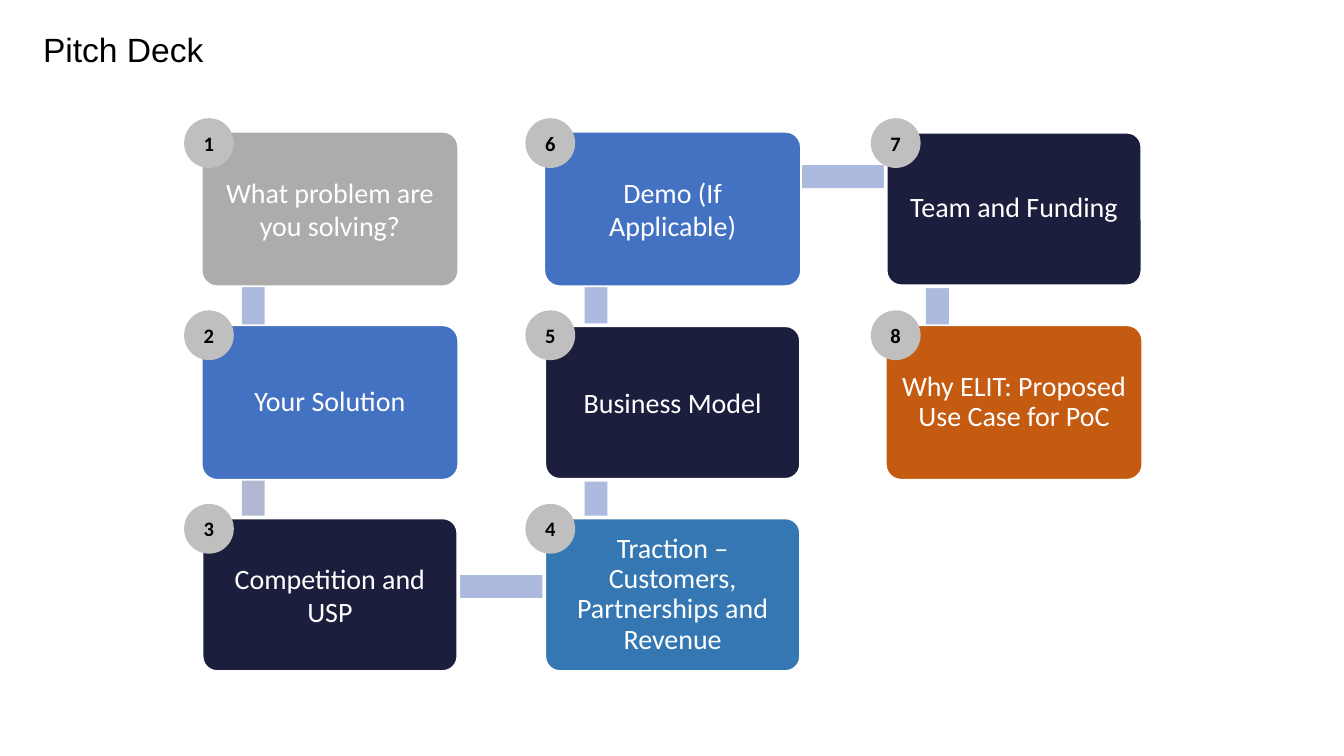
from pptx import Presentation
from pptx.dml.color import RGBColor
from pptx.enum import shapes, text
from pptx.util import Inches, Pt

WHITE = RGBColor(0xFF, 0xFF, 0xFF)
BLACK = RGBColor(0x00, 0x00, 0x00)
GRAY = RGBColor(0xAE, 0xAB, 0xAB)
BADGE_GRAY = RGBColor(0xBF, 0xBF, 0xBF)
BLUE = RGBColor(0x43, 0x72, 0xC3)
NAVY = RGBColor(0x1B, 0x1E, 0x3D)
TEAL = RGBColor(0x34, 0x77, 0xB2)
ORANGE = RGBColor(0xC5, 0x5A, 0x11)
LINK = RGBColor(0xAB, 0xBA, 0xDE)
LINK_GRAY = RGBColor(0xB1, 0xB8, 0xD2)

COLUMNS = [1.5, 4.05, 6.59]
ROWS = [0.98, 2.42, 3.85]
BADGE_COLUMNS = [1.37, 3.91, 6.48]
BADGE_ROWS = [0.88, 2.31, 3.75]
CARD_WIDTH, CARD_HEIGHT = 1.91, 1.15
BADGE_SIZE = 0.37
LINK_THICKNESS = 0.17

# Steps in reading order: label, column, row, fill, outline width, line spacing
STEPS = [
    ("What problem are you solving?", 0, 0, GRAY, 1, 1.0),
    ("Your Solution", 0, 1, BLUE, 1, 0.9),
    ("Competition and USP", 0, 2, NAVY, 2, 1.0),
    ("Traction – Customers, Partnerships and Revenue", 1, 2, TEAL, 2, 0.9),
    ("Business Model", 1, 1, NAVY, 2, 1.0),
    ("Demo (If Applicable)", 1, 0, BLUE, 1, 1.0),
    ("Team and Funding", 2, 0, NAVY, 2, 0.9),
    ("Why ELIT: Proposed Use Case for PoC", 2, 1, ORANGE, 1, 0.9),
]


def add_filled_shape(kind, left, top, width, height, fill):
    shape = slide.shapes.add_shape(
        kind, Inches(left), Inches(top), Inches(width), Inches(height))
    shape.shadow.inherit = False
    shape.fill.solid()
    shape.fill.fore_color.rgb = fill
    shape.line.fill.background()
    return shape


def write_text(shape, content, size, color, font_name, margins, spacing=1.0,
               alignment=text.PP_ALIGN.CENTER, bold=False):
    frame = shape.text_frame
    frame.text = content
    frame.word_wrap = True
    frame.vertical_anchor = text.MSO_ANCHOR.MIDDLE
    frame.margin_left = frame.margin_right = Inches(margins[0])
    frame.margin_top = frame.margin_bottom = Inches(margins[1])
    paragraph = frame.paragraphs[0]
    paragraph.alignment = alignment
    paragraph.line_spacing = spacing
    font = paragraph.runs[0].font
    font.name, font.size, font.bold = font_name, Pt(size), bold
    font.color.rgb = color


# Widescreen 16:9 slide
presentation = Presentation()
presentation.slide_width = Inches(10)
presentation.slide_height = Inches(10) * 9 // 16
slide = presentation.slides.add_slide(presentation.slide_layouts[6])

# Title
title = slide.shapes.add_textbox(Inches(0.25), Inches(0.11), Inches(8.62), Inches(0.55))
write_text(title, "Pitch Deck", 18, BLACK, "Arial", (0.07, 0.04), 0.9,
           text.PP_ALIGN.LEFT)

# Vertical links between rows, partly covered by the cards
for column, row, color in [(0, 0, LINK), (0, 1, LINK_GRAY), (1, 0, LINK),
                           (1, 1, LINK), (2, 0, LINK)]:
    add_filled_shape(shapes.MSO_SHAPE.RECTANGLE, COLUMNS[column] + 0.3,
                     ROWS[row] + 0.28, LINK_THICKNESS, 1.43, color)

# Horizontal links between columns
for left, top in [(2.13, 4.28), (4.57, 1.23)]:
    add_filled_shape(shapes.MSO_SHAPE.RECTANGLE, left, top, 2.53,
                     LINK_THICKNESS, LINK)

# Step cards
for label, column, row, fill, outline, spacing in STEPS:
    card = add_filled_shape(shapes.MSO_SHAPE.ROUNDED_RECTANGLE, COLUMNS[column],
                            ROWS[row], CARD_WIDTH, CARD_HEIGHT, fill)
    card.adjustments[0] = 0.1
    card.line.color.rgb = WHITE
    card.line.width = Pt(outline)
    write_text(card, label, 15, WHITE, "Calibri", (0.06, 0.07), spacing)

# Number badges
for number, (label, column, row, *style) in enumerate(STEPS, start=1):
    badge = add_filled_shape(shapes.MSO_SHAPE.OVAL, BADGE_COLUMNS[column],
                             BADGE_ROWS[row], BADGE_SIZE, BADGE_SIZE, BADGE_GRAY)
    write_text(badge, str(number), 11, BLACK, "Calibri", (0.07, 0.04), bold=True)

presentation.save("out.pptx")
